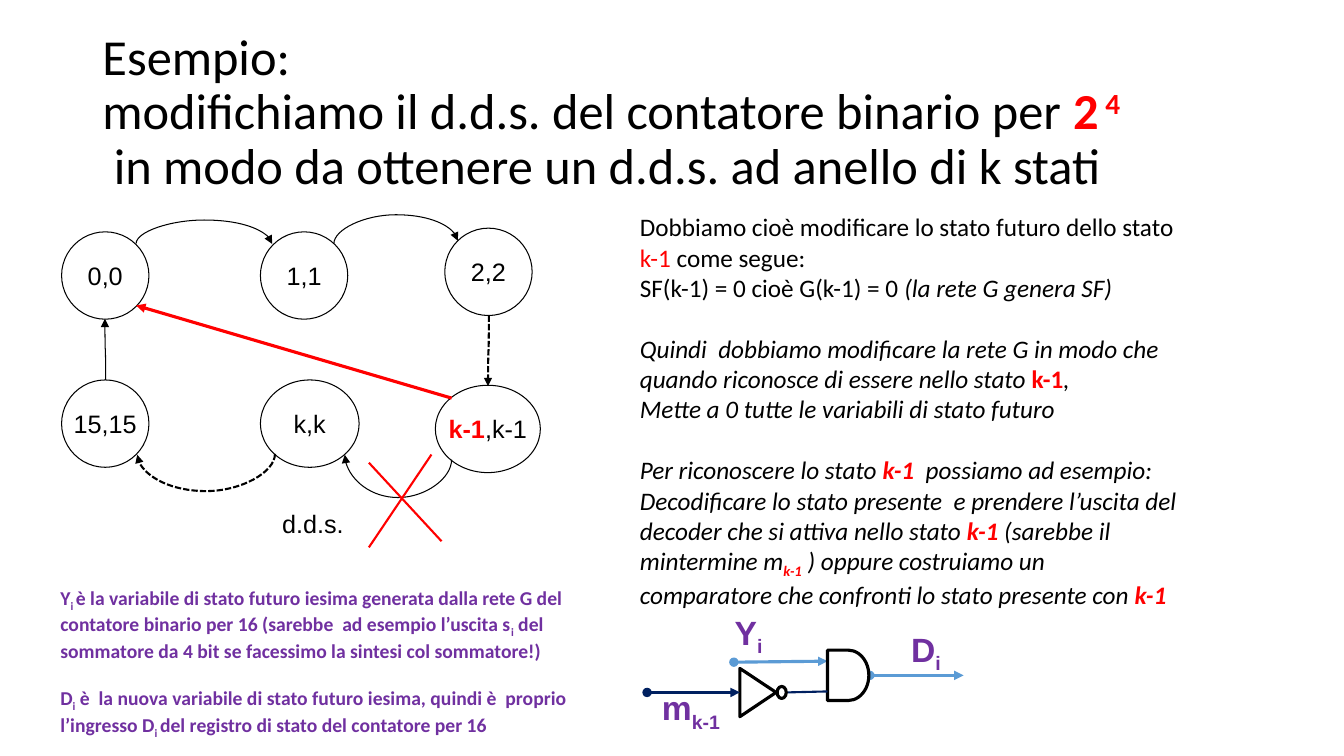
from lxml import etree
from pptx import Presentation
from pptx.dml.color import RGBColor
from pptx.enum.dml import MSO_LINE
from pptx.enum.shapes import MSO_CONNECTOR, MSO_SHAPE
from pptx.enum.text import MSO_ANCHOR, MSO_AUTO_SIZE, PP_ALIGN
from pptx.oxml.ns import qn
from pptx.util import Pt

BLACK = RGBColor(0, 0, 0)
WHITE = RGBColor(255, 255, 255)
RED = RGBColor(255, 0, 0)
PURPLE = RGBColor(0x70, 0x30, 0xA0)
BLUE = RGBColor(0x5B, 0x9B, 0xD5)
NAVY = RGBColor(0, 0x20, 0x60)
OVAL = MSO_SHAPE.OVAL
DELAY = MSO_SHAPE.FLOWCHART_DELAY
LINE = MSO_CONNECTOR.STRAIGHT
CURVE = MSO_CONNECTOR.CURVE
DASH = MSO_LINE.SQUARE_DOT
MIDDLE = MSO_ANCHOR.MIDDLE
CENTER = PP_ALIGN.CENTER
LEFT = PP_ALIGN.LEFT
FIXED = MSO_AUTO_SIZE.NONE

HOT = dict(color=RED, bold=True)
SUB = dict(base=-25)
STATE = 62.4

TASK = [
    (0, [("Dobbiamo cioè modificare lo stato futuro dello stato ", {}),
         ("k-1 ", dict(color=RED)), ("come segue:", {})]),
    (0, [("SF(k-1) = 0 cioè G(k-1) = 0 ", {}),
         ("(la rete G genera SF)", dict(italic=True))]),
]
PLAN = [
    (22, [("Quindi  dobbiamo modificare la rete G in modo che quando "
           "riconosce di essere nello stato ", {}),
          ("k-1", dict(HOT, italic=False)), (",", {})]),
    (0, [("Mette a 0 tutte le variabili di stato futuro", {})]),
    (22, [("Per riconoscere lo stato ", {}), ("k-1", HOT),
          ("  possiamo ad esempio:", {})]),
    (0, [("Decodificare lo stato presente  e prendere l’uscita del decoder "
          "che si attiva nello stato ", {}), ("k-1", HOT),
         (" (sarebbe il mintermine m", {}), ("k-1", dict(HOT, **SUB)),
         (" ) oppure costruiamo un comparatore che confronti lo stato "
          "presente con ", {}), ("k-1", HOT)]),
]
NOTE = [
    (0, [("Y", {}), ("i ", SUB),
         ("è la variabile di stato futuro iesima generata dalla rete G del "
          "contatore binario per 16 (sarebbe  ad esempio l’uscita s", {}),
         ("i", SUB),
         (" del sommatore da 4 bit se facessimo la sintesi col sommatore!)",
          {})]),
    (17, [("D", {}), ("i", SUB),
          (" è  la nuova variabile di stato futuro iesima, quindi è  proprio "
           "l’ingresso D", {}), ("i ", SUB),
          ("del registro di stato del contatore per 16", {})]),
]
STATES = [
    (44, 165.6, STATE, "0,0"), (186, 165.6, STATE, "1,1"),
    (317.7, 163, STATE, "2,2"), (44, 271.4, STATE, "15,15"),
    (186, 271.4, 70.5, "k,k"),
]
ARCS = [
    (97.2, 174, 194.4, 174.2, 157, 0.75, None),
    (238.5, 174.2, 327, 172, 153.5, 0.75, None),
    (75.5, 271.4, 75, 227.7, 249.5, 0.75, None),
    (349.2, 225.4, 348.6, 275.8, 250.6, 1.5, DASH),
    (196.4, 324.2, 98, 324.8, 351, 1.5, DASH),
    (322.6, 328.3, 246.3, 324.8, 355.5, 0.75, None),
]
LABELS = [
    (517.7, 433.4, 34.6, "Y", "i"), (465.8, 487.4, 59.8, "m", "k-1"),
    (643.7, 445.7, 36.7, "D", "i"),
]


def say(para, text, size=18, font="Calibri", color=BLACK, bold=False,
        italic=False, base=0):
    run = para.add_run()
    run.text = text
    run.font.size = Pt(size)
    run.font.name = font
    run.font.color.rgb = color
    run.font.bold = bold
    run.font.italic = italic
    if base:
        run.font._element.set("baseline", str(base * 1000))


def fill_text(frame, paras, **look):
    for num, (gap, runs) in enumerate(paras):
        para = frame.add_paragraph() if num else frame.paragraphs[0]
        para.space_before = Pt(gap)
        for text, extra in runs:
            say(para, text, **dict(look, **extra))


def add_text(slide, x, y, w, h, paras, wrap=True, **look):
    frame = slide.shapes.add_textbox(Pt(x), Pt(y), Pt(w), Pt(h)).text_frame
    frame.word_wrap = wrap
    fill_text(frame, paras, **look)


def paint(shape, width):
    shape.shadow.inherit = False
    shape.fill.solid()
    shape.fill.fore_color.rgb = WHITE
    shape.line.color.rgb = BLACK
    shape.line.width = Pt(width)


def add_form(slide, kind, x, y, w, h, width=2.25):
    shape = slide.shapes.add_shape(kind, Pt(x), Pt(y), Pt(w), Pt(h))
    paint(shape, width)
    return shape


def add_state(slide, x, y, w, runs):
    frame = add_form(slide, OVAL, x, y, w, STATE, 0.75).text_frame
    frame.word_wrap = False
    frame.vertical_anchor = MIDDLE
    frame.paragraphs[0].alignment = CENTER
    fill_text(frame, [(0, runs)], font="Arial")


def add_wire(slide, x1, y1, x2, y2, color=BLACK, width=1.5, head=None,
             tail=None, dash=None, kind=LINE):
    wire = slide.shapes.add_connector(kind, Pt(x1), Pt(y1), Pt(x2), Pt(y2))
    wire.line.color.rgb = color
    wire.line.width = Pt(width)
    if dash:
        wire.line.dash_style = dash
    ln = wire.line._get_or_add_ln()
    for tag, end in (("a:headEnd", head), ("a:tailEnd", tail)):
        if end:
            etree.SubElement(ln, qn(tag)).set("type", end)
    etree.SubElement(wire._element.spPr, qn("a:effectLst"))
    return wire


def add_arc(slide, x1, y1, x2, y2, bend, width, dash):
    wire = add_wire(slide, x1, y1, x2, y2, width=width, tail="triangle",
                    dash=dash, kind=CURVE)
    w, h = abs(y2 - y1), abs(x2 - x1)
    wire.left, wire.top = Pt((x1 + x2 - w) / 2), Pt((y1 + y2 - h) / 2)
    wire.width, wire.height = Pt(w), Pt(h)
    props = wire._element.spPr
    frame = props.find(qn("a:xfrm"))
    frame.set("rot", "5400000")
    frame.set("flipH", str(int(y2 < y1)))
    frame.set("flipV", str(int(x2 > x1)))
    guides = props.find(qn("a:prstGeom")).find(qn("a:avLst"))
    ratio = round((bend - y1) / (y2 - y1) * 100000)
    guide = etree.SubElement(guides, qn("a:gd"))
    guide.set("name", "adj1")
    guide.set("fmla", f"val {ratio}")


def add_title(slide):
    title = slide.shapes.title
    title.left, title.top = Pt(66), Pt(28.8)
    title.width, title.height = Pt(828), Pt(104.4)
    frame = title.text_frame
    frame.auto_size = FIXED
    frame.vertical_anchor = MIDDLE
    para = frame.paragraphs[0]
    para.alignment = LEFT
    para.line_spacing = 0.9
    say(para, "Esempio: ", size=36)
    para.add_line_break()
    say(para, "modifichiamo il d.d.s. del contatore binario per ", size=36)
    say(para, "2", size=36, **HOT)
    say(para, " 4", size=36, base=30, **HOT)
    para.add_line_break()
    say(para, " in modo da ottenere un d.d.s. ad anello di k stati", size=36)


def add_graph(slide):
    for x, y, w, text in STATES:
        add_state(slide, x, y, w, [(text, {})])
    add_state(slide, 311, 275.2, 75, [("k-1", HOT), (",k-1", {})])
    for arc in ARCS:
        add_arc(slide, *arc)
    add_text(slide, 194.4, 359.3, 62, 28.8, [(0, [("d.d.s.", {})])],
             font="Arial")
    add_wire(slide, 322.6, 284.4, 97.2, 218.2, RED, 2.25, tail="triangle")
    add_wire(slide, 263.5, 330.5, 315.4, 386.6, RED)
    add_wire(slide, 308.2, 324.7, 263.5, 391, RED)


def add_gates(slide):
    ends = dict(width=2.25, head="oval", tail="triangle")
    add_wire(slide, 524.2, 473, 591.1, 472.3, BLUE, **ends)
    add_wire(slide, 621.4, 482.4, 688.3, 482.4, BLUE, **ends)
    add_form(slide, DELAY, 591.1, 464.4, 29.5, 36)
    add_wire(slide, 561.6, 494.6, 591.1, 493.9, NAVY)
    pen = slide.shapes.build_freeform(Pt(554.4), Pt(494.6))
    pen.add_line_segments([(Pt(528.5), Pt(477.4)), (Pt(528.5), Pt(511.9))])
    paint(pen.convert_to_shape(), 2.25)
    add_wire(slide, 462.2, 494.6, 528.5, 494.6, NAVY, **ends)
    add_form(slide, OVAL, 555.1, 490.3, 6.5, 8.6)
    for x, y, w, name, index in LABELS:
        add_text(slide, x, y, w, 36, [(0, [(name, {}), (index, SUB)])],
                 wrap=False, size=24, font="Arial", color=PURPLE, bold=True)


def main():
    deck = Presentation()
    deck.slide_width, deck.slide_height = Pt(960), Pt(540)
    slide = deck.slides.add_slide(deck.slide_layouts[5])
    add_title(slide)
    add_graph(slide)
    plan = [(gap, [(text, dict(dict(italic=True), **extra))
                   for text, extra in runs]) for gap, runs in PLAN]
    add_text(slide, 450, 147.6, 400.3, 290.9, TASK + plan)
    add_gates(slide)
    add_text(slide, 36, 414.7, 404.6, 108.7, NOTE, size=14, color=PURPLE,
             bold=True)
    deck.save("out.pptx")


if __name__ == "__main__":
    main()
